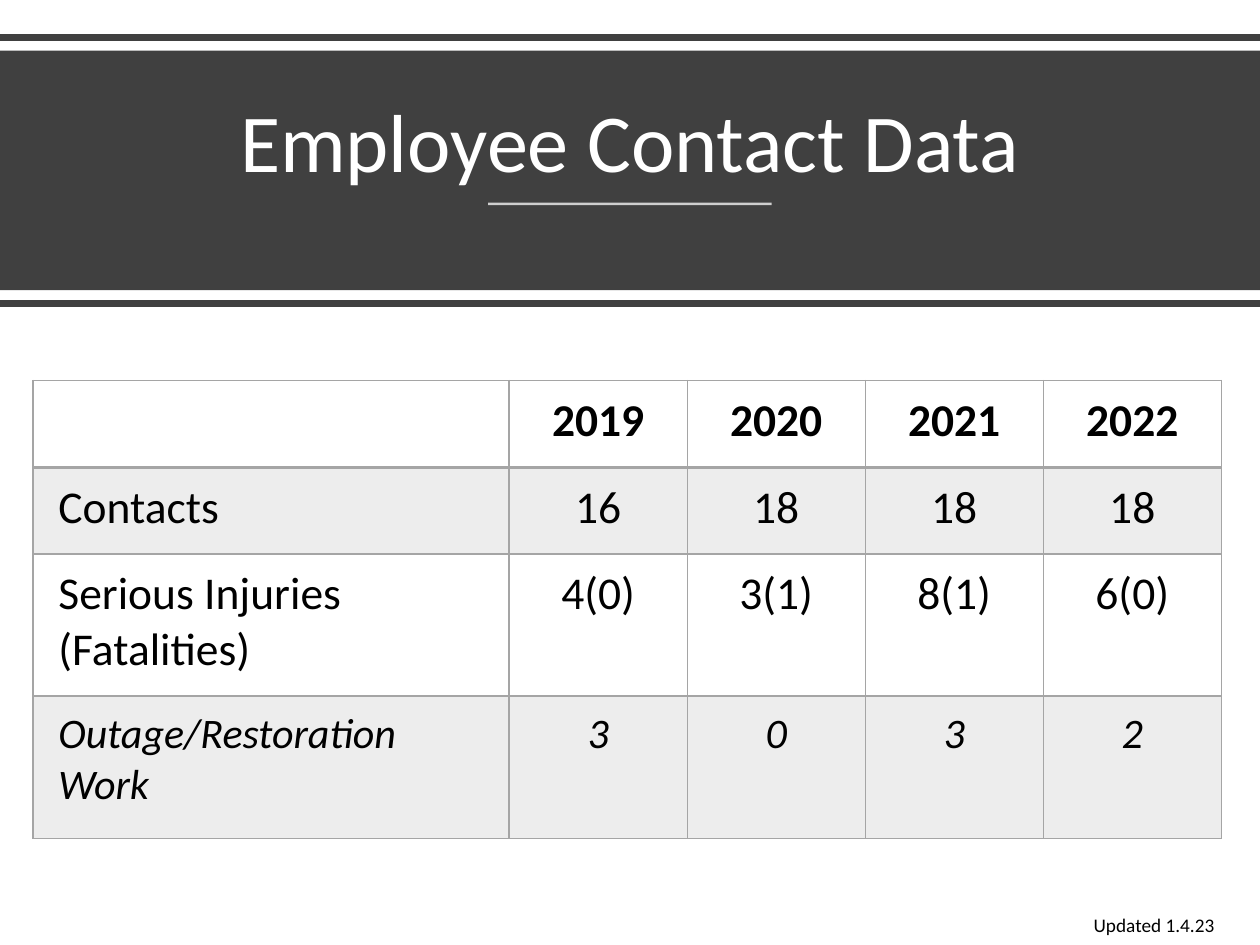
"""Build the employee contact data slide: a title band above a yearly table."""
from dataclasses import dataclass

from lxml.etree import SubElement
from pptx import Presentation
from pptx.dml.color import RGBColor
from pptx.enum.shapes import MSO_CONNECTOR, MSO_SHAPE
from pptx.enum.text import MSO_ANCHOR, PP_ALIGN
from pptx.oxml import parse_xml
from pptx.oxml.ns import nsdecls, qn
from pptx.util import Pt


@dataclass(frozen=True)
class Theme:
    font: str = "Calibri"
    band: RGBColor = RGBColor.from_string("404040")
    white: RGBColor = RGBColor.from_string("FFFFFF")
    text: RGBColor = RGBColor.from_string("000000")
    grid: RGBColor = RGBColor.from_string("A5A5A5")
    title_size: int = 47
    table_size: int = 26
    detail_size: int = 24
    note_size: int = 11


def add_rule(shapes, left, right, top, color, width):
    rule = shapes.add_connector(MSO_CONNECTOR.STRAIGHT, Pt(left), Pt(top), Pt(right), Pt(top))
    rule.line.color.rgb = color
    rule.line.width = Pt(width)
    SubElement(rule.element.spPr, qn("a:effectLst"))
    return rule


def set_opacity(element, percent):
    color = element.find(".//" + qn("a:srgbClr"))
    SubElement(color, qn("a:alpha")).set("val", str(percent * 1000))


theme = Theme()
presentation = Presentation()
presentation.slide_width = Pt(720)
presentation.slide_height = Pt(540)
slide = presentation.slides.add_slide(presentation.slide_layouts[5])
shapes = slide.shapes
title = shapes.title

top_rule = add_rule(shapes, 0, 720, 21.5, theme.band, 4)
band = shapes.add_shape(MSO_SHAPE.RECTANGLE, 0, Pt(29), Pt(720), Pt(136.8))
band.shadow.inherit = False
band.fill.solid()
band.fill.fore_color.rgb = theme.band
band.line.fill.background()
for backdrop in (top_rule, band):
    title.element.addprevious(backdrop.element)

title.left, title.top, title.width, title.height = Pt(31), Pt(39), Pt(658), Pt(73.4)
title.text_frame.text = "Employee Contact Data"
title.text_frame.vertical_anchor = MSO_ANCHOR.BOTTOM
paragraph = title.text_frame.paragraphs[0]
paragraph.alignment = PP_ALIGN.CENTER
paragraph.line_spacing = 0.9
paragraph.font.name = theme.font
paragraph.font.size = Pt(theme.title_size)
paragraph.font.color.rgb = theme.white

underline = add_rule(shapes, 279, 441, 116.5, theme.white, 1.5)
set_opacity(underline.element.spPr, 75)
add_rule(shapes, 0, 720, 173.5, theme.band, 4)

rows = [
    ["", "2019", "2020", "2021", "2022"],
    ["Contacts", "16", "18", "18", "18"],
    ["Serious Injuries (Fatalities)", "4(0)", "3(1)", "8(1)", "6(0)"],
    ["Outage/Restoration Work", "3", "0", "3", "2"],
]
column_widths = [272] + [101.75] * 4
row_heights = [49.5, 49.5, 81.3, 81.3]
table = shapes.add_table(
    len(rows), len(column_widths), Pt(19), Pt(217.5), Pt(sum(column_widths)), Pt(sum(row_heights))
).table
table.first_row = False
table.horz_banding = False
for column, width in zip(table.columns, column_widths):
    column.width = Pt(width)
for row, height in zip(table.rows, row_heights):
    row.height = Pt(height)

for row_index, values in enumerate(rows):
    is_header = row_index == 0
    is_detail = row_index == len(rows) - 1
    for column_index, value in enumerate(values):
        cell = table.cell(row_index, column_index)
        cell.text = value
        cell.margin_left = cell.margin_right = Pt(14.4)
        cell.margin_top = cell.margin_bottom = Pt(7.2)
        paragraph = cell.text_frame.paragraphs[0]
        paragraph.alignment = PP_ALIGN.CENTER if column_index else PP_ALIGN.LEFT
        paragraph.font.name = theme.font
        paragraph.font.size = Pt(theme.detail_size if is_detail else theme.table_size)
        paragraph.font.color.rgb = theme.text
        paragraph.font.bold = is_header
        paragraph.font.italic = is_detail

        properties = cell._tc.get_or_add_tcPr()
        if row_index % 2:
            cell.fill.solid()
            cell.fill.fore_color.rgb = theme.grid
            set_opacity(properties, 20)
        else:
            cell.fill.background()
        below_header = {(0, "lnB"), (1, "lnT")}
        for position, side in enumerate(("lnL", "lnR", "lnT", "lnB")):
            width = Pt(2 if (row_index, side) in below_header else 1)
            border = parse_xml(
                f'<a:{side} {nsdecls("a")} w="{width}"><a:solidFill>'
                f'<a:srgbClr val="{theme.grid}"/></a:solidFill></a:{side}>'
            )
            properties.insert(position, border)

note = shapes.add_textbox(Pt(617.8), Pt(518.4), Pt(102.2), Pt(44))
note.text_frame.word_wrap = True
note.text_frame.text = "Updated 1.4.23"
paragraph = note.text_frame.paragraphs[0]
paragraph.font.name = theme.font
paragraph.font.size = Pt(theme.note_size)
paragraph.font.color.rgb = theme.text

presentation.save("out.pptx")
